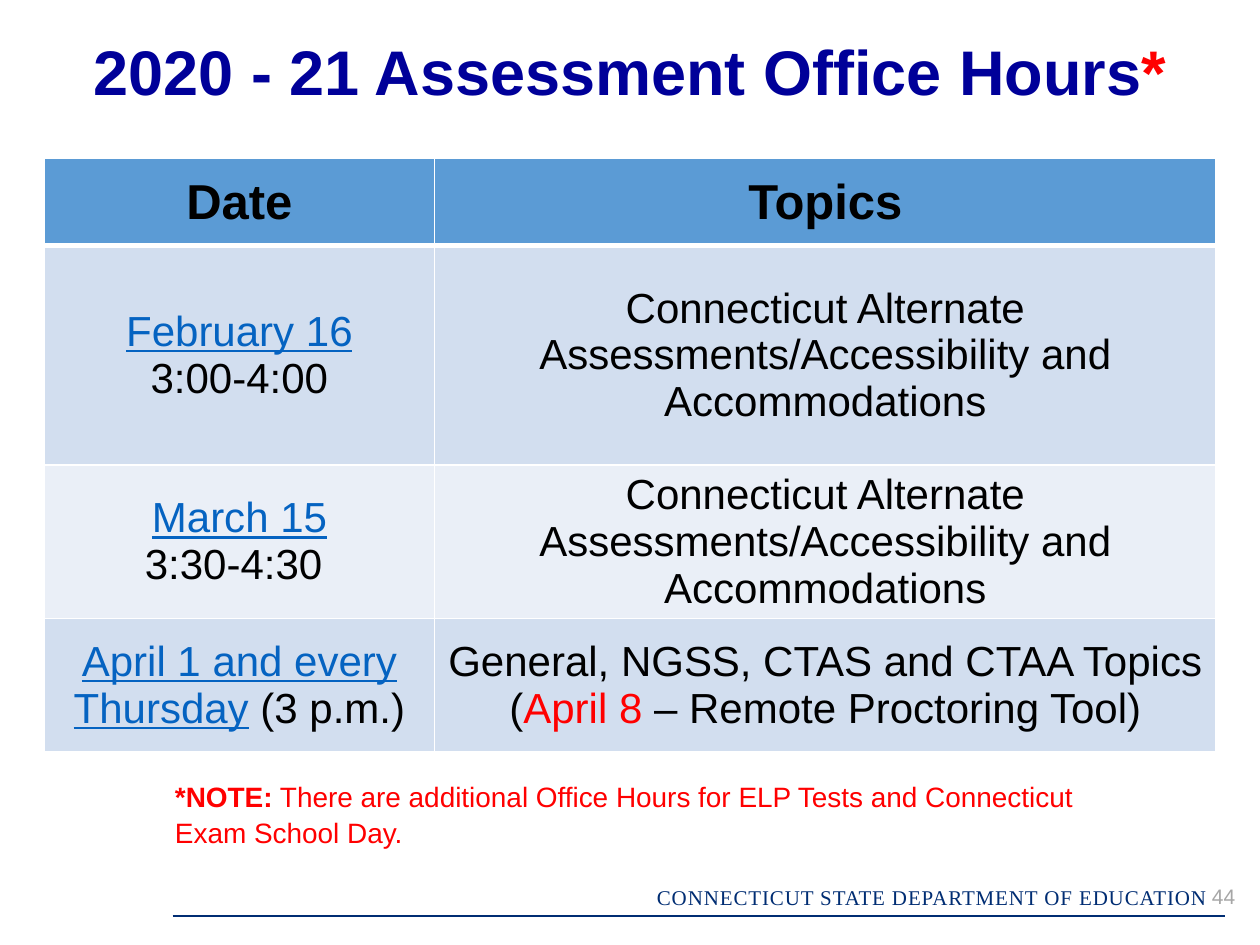
from dataclasses import dataclass

from lxml.etree import SubElement
from pptx import Presentation
from pptx.dml.color import RGBColor
from pptx.enum.shapes import MSO_CONNECTOR
from pptx.enum.text import MSO_ANCHOR, PP_ALIGN
from pptx.oxml import parse_xml
from pptx.oxml.ns import nsdecls, qn
from pptx.util import Inches, Pt

BLACK = RGBColor(0x00, 0x00, 0x00)
WHITE = RGBColor(0xFF, 0xFF, 0xFF)
RED = RGBColor(0xFF, 0x00, 0x00)
TITLE = RGBColor(0x00, 0x00, 0x99)
NAVY = RGBColor(0x00, 0x2D, 0x73)
GRAY = RGBColor(0xA6, 0xA6, 0xA6)
LINK = RGBColor(0x05, 0x63, 0xC1)
HEAD = RGBColor(0x5B, 0x9B, 0xD5)
DARK = RGBColor(0xD2, 0xDE, 0xEF)
PALE = RGBColor(0xEA, 0xEF, 0xF7)


@dataclass
class Run:
    text: str
    color: RGBColor = BLACK
    bold: bool = False
    line: bool = False
    size: int = 24
    face: str = "Arial"
    space: int = 0


@dataclass
class Note:
    box: tuple
    runs: list
    align: PP_ALIGN = PP_ALIGN.LEFT
    wrap: bool = True
    pitch: float = 1.0


@dataclass
class Row:
    high: float
    fill: RGBColor
    date: list
    topic: list


TOPIC = [[Run("Connecticut Alternate Assessments/Accessibility and Accommodations")]]
ROWS = [
    Row(0.69, HEAD, [[Run("Date", bold=True, size=28)]], [[Run("Topics", bold=True, size=28)]]),
    Row(1.74, DARK, [[Run("February 16", LINK, line=True)], [Run("3:00-4:00")]], TOPIC),
    Row(1.22, PALE, [[Run("March 15", LINK, line=True)], [Run("3:30-4:30 ")]], TOPIC),
    Row(1.06, DARK,
        [[Run("April 1 and every Thursday", LINK, line=True), Run(" (3 p.m.)")]],
        [[Run("General, NGSS, CTAS and CTAA Topics ("), Run("April 8", RED),
          Run(" – Remote Proctoring Tool)")]]),
]
NOTES = [
    Note((5.06, 6.97, 4.62, 0.3),
         [Run("CONNECTICUT STATE DEPARTMENT OF EDUCATION", NAVY, size=12,
              face="Times New Roman", space=50)], PP_ALIGN.RIGHT),
    Note((9.52, 6.96, 0.41, 0.3), [Run("44", GRAY, size=12)], wrap=False),
    Note((1.29, 6.12, 7.79, 0.64),
         [Run("*NOTE:", RED, True, size=16),
          Run(" There are additional Office Hours for ELP Tests and Connecticut "
              "Exam School Day.", RED, size=16)], pitch=1.07),
]


def write(para, runs: list, align: PP_ALIGN, pitch: float = 1.0) -> None:
    para.alignment = align
    para.line_spacing = pitch
    for item in runs:
        run = para.add_run()
        run.text = item.text
        form = {"name": item.face, "size": Pt(item.size),
                "bold": item.bold, "underline": item.line}
        for key, value in form.items():
            setattr(run.font, key, value)
        run.font.color.rgb = item.color
        if item.space:
            run.font._element.set("spc", str(item.space))


def edge(cell, below: int) -> None:
    props = cell._tc.get_or_add_tcPr()
    for spot, side in enumerate("LRTB"):
        width = Pt(below if side == "B" else 1)
        props.insert(spot, parse_xml(
            f'<a:ln{side} {nsdecls("a")} w="{width}"><a:solidFill>'
            f'<a:srgbClr val="{WHITE}"/></a:solidFill></a:ln{side}>'))


def fill(cell, lines: list, color: RGBColor, below: int) -> None:
    cell.fill.solid()
    cell.fill.fore_color.rgb = color
    cell.vertical_anchor = MSO_ANCHOR.MIDDLE
    frame = cell.text_frame
    for index, runs in enumerate(lines):
        para = frame.add_paragraph() if index else frame.paragraphs[0]
        write(para, runs, PP_ALIGN.CENTER)
    edge(cell, below)


def add_note(slide, note: Note) -> None:
    frame = slide.shapes.add_textbox(*map(Inches, note.box)).text_frame
    frame.word_wrap = note.wrap
    write(frame.paragraphs[0], note.runs, note.align, note.pitch)


def add_title(slide) -> None:
    title = slide.shapes.title
    place = {"left": 0, "top": 0, "width": Inches(10), "height": Inches(1.2)}
    for key, value in place.items():
        setattr(title, key, value)
    title.text_frame.vertical_anchor = MSO_ANCHOR.MIDDLE
    write(title.text_frame.paragraphs[0],
          [Run("2020 - 21 Assessment Office Hours", TITLE, True, size=36),
           Run("*", RED, True, size=36)], PP_ALIGN.CENTER, 0.9)


def add_hours(slide) -> None:
    high = sum(row.high for row in ROWS)
    box = map(Inches, (0.35, 1.26, 9.3, high))
    table = slide.shapes.add_table(len(ROWS), 2, *box).table
    for column, width in zip(table.columns, (3.1, 6.2)):
        column.width = Inches(width)
    for index, row in enumerate(ROWS):
        table.rows[index].height = Inches(row.high)
        for spot, lines in enumerate((row.date, row.topic)):
            fill(table.cell(index, spot), lines, row.fill, 1 if index else 3)


def add_rule(slide) -> None:
    ends = map(Inches, (1.37, 7.27, 9.72, 7.27))
    rule = slide.shapes.add_connector(MSO_CONNECTOR.STRAIGHT, *ends)
    rule.line.color.rgb = NAVY
    rule.line.width = Pt(0.75)
    SubElement(rule._element.spPr, qn("a:effectLst"))


def main() -> None:
    deck = Presentation()
    deck.slide_width, deck.slide_height = Inches(10), Inches(7.5)
    slide = deck.slides.add_slide(deck.slide_layouts[5])
    add_rule(slide)
    add_title(slide)
    add_hours(slide)
    for note in NOTES:
        add_note(slide, note)
    deck.save("out.pptx")


if __name__ == "__main__":
    main()
